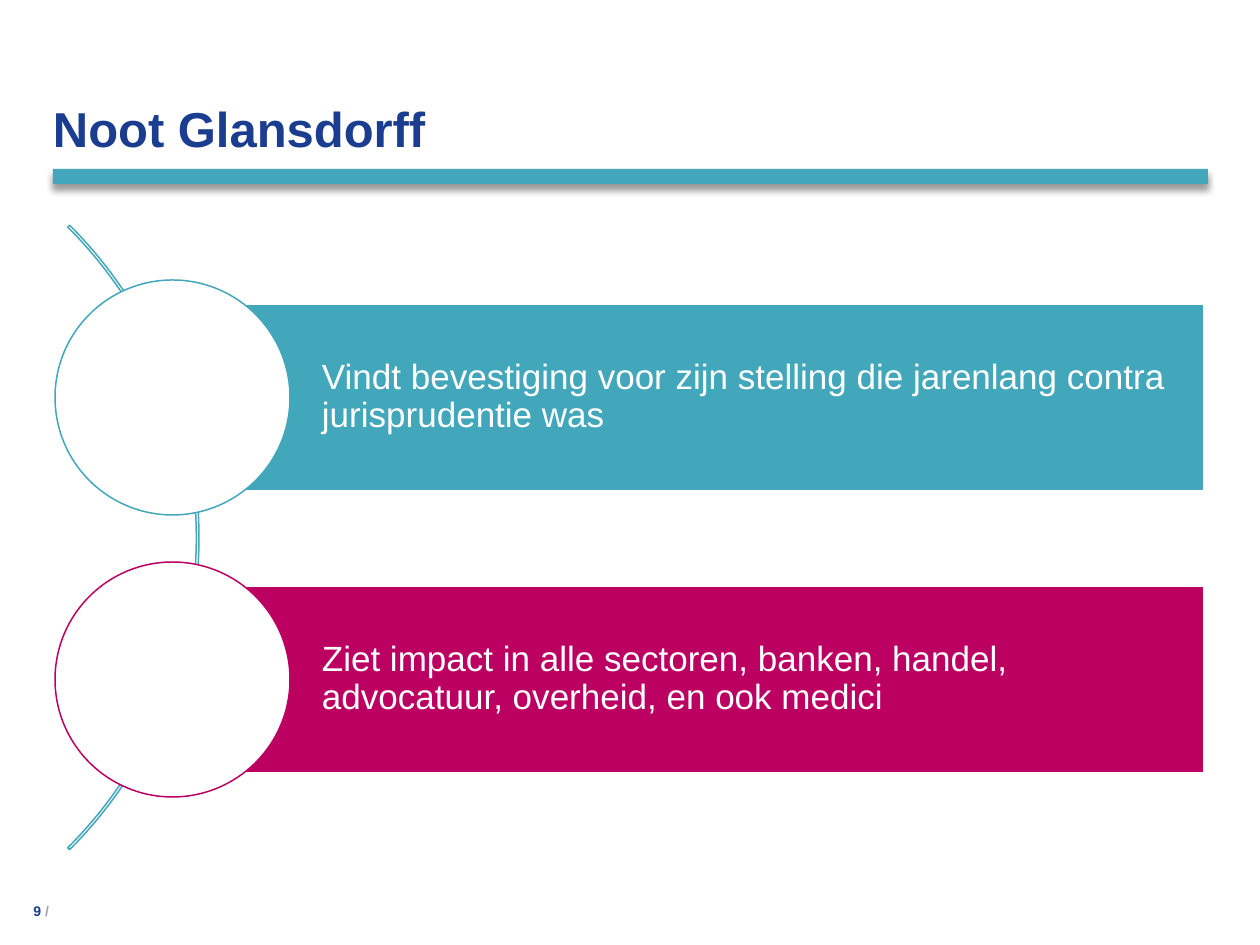
from lxml import etree
from pptx import Presentation
from pptx.dml.color import RGBColor
from pptx.enum.shapes import MSO_SHAPE as SHAPE
from pptx.enum.text import MSO_ANCHOR as ANCHOR, PP_ALIGN as ALIGN
from pptx.oxml.ns import qn
from pptx.util import Pt

PX = 914400 / 126
COLORS = {
    "teal": "42A7BB",
    "magenta": "BC0062",
    "navy": "1A3D8F",
    "gray": "9EA3A6",
    "white": "FFFFFF",
    "black": "000000",
}


def add_box(kind, bounds, fill=None, line=None):
    box = slide.shapes.add_shape(kind, *[round(v * PX) for v in bounds])
    box.shadow.inherit = False
    if fill:
        box.fill.solid()
        box.fill.fore_color.rgb = RGBColor.from_string(COLORS[fill])
    else:
        box.fill.background()
    if line:
        box.line.color.rgb = RGBColor.from_string(COLORS[line])
        box.line.width = Pt(0.85)
    else:
        box.line.fill.background()
    return box


def write(box, texts, anchor, insets, align, size, bold=False):
    frame = box.text_frame
    frame.word_wrap = True
    frame.vertical_anchor = anchor
    frame.margin_left, frame.margin_top, frame.margin_right, frame.margin_bottom = [
        round(v * PX) for v in insets
    ]
    paragraph = frame.paragraphs[0]
    paragraph.alignment = align
    for text, color in texts:
        run = paragraph.add_run()
        run.text = text
        run.font.name = "Arial"
        run.font.size = Pt(size)
        run.font.bold = bold
        run.font.color.rgb = RGBColor.from_string(COLORS[color])
    return paragraph


deck = Presentation()
deck.slide_width = round(1260 * PX)
deck.slide_height = round(945 * PX)
slide = deck.slides.add_slide(deck.slide_layouts[6])

title_rule = add_box(SHAPE.RECTANGLE, (53, 169, 1155, 15), "teal")
effects = title_rule._element.spPr.find(qn("a:effectLst"))
shadow = etree.SubElement(
    effects, qn("a:outerShdw"), blurRad=str(Pt(4)), dist=str(Pt(3)),
    dir="5400000", algn="t", rotWithShape="0",
)
shadow_color = etree.SubElement(shadow, qn("a:srgbClr"), val=COLORS["black"])
etree.SubElement(shadow_color, qn("a:alpha"), val="40000")

page_number = slide.shapes.add_textbox(*[round(v * PX) for v in (0, 895, 53, 24)])
write(page_number, [("9", "navy"), (" / ", "gray")], ANCHOR.BOTTOM, (0, 0, 0, 0),
      ALIGN.RIGHT, 8, True)

arc = add_box(SHAPE.BLOCK_ARC, (-684, 96, 883, 883), line="teal")
for index, value in enumerate((189, 27, 0.003)):
    arc.adjustments[index] = value

points = [
    ("Vindt bevestiging voor zijn stelling die jarenlang contra jurisprudentie was", "teal"),
    ("Ziet impact in alle sectoren, banken, handel, advocatuur, overheid, en ook medici", "magenta"),
]
for index, (statement, color) in enumerate(points):
    top = 304 + index * 282
    band = add_box(SHAPE.RECTANGLE, (173, top, 1031, 187), color, "white")
    paragraph = write(band, [(statement, "white")], ANCHOR.MIDDLE, (149, 8, 8, 8),
                      ALIGN.LEFT, 20)
    paragraph.line_spacing = 0.9
    add_box(SHAPE.OVAL, (55, top - 24, 235, 235), "white", color)

title = slide.shapes.add_textbox(*[round(v * PX) for v in (53, 26, 1155, 131)])
write(title, [("Noot Glansdorff", "navy")], ANCHOR.BOTTOM, (0, 0, 0, 0),
      ALIGN.LEFT, 28, True)

deck.save("out.pptx")
